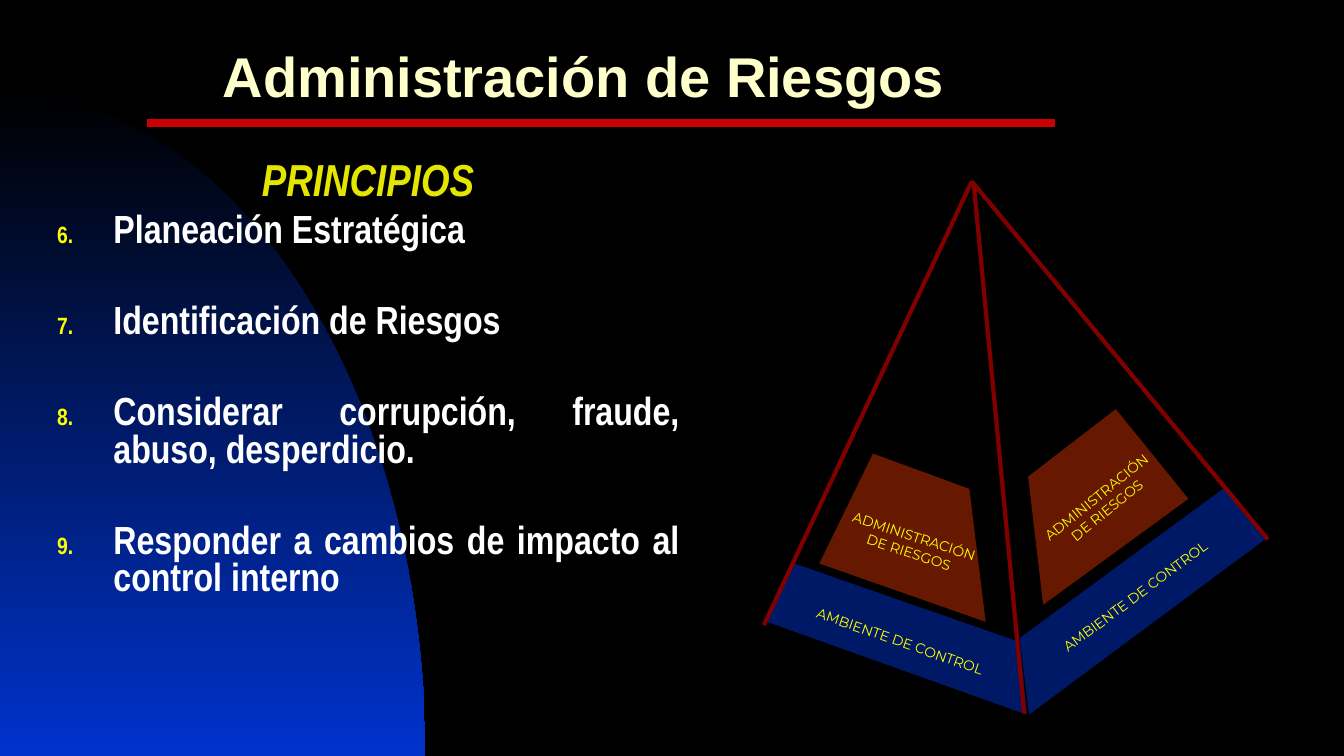
"""Build the slide on risk management with its principles and the control pyramid."""
from math import cos, pi, sin

from lxml.etree import SubElement
from pptx import Presentation
from pptx.dml.color import RGBColor
from pptx.enum.shapes import MSO_CONNECTOR as Connector
from pptx.enum.text import MSO_ANCHOR as Anchor, MSO_AUTO_SIZE as AutoSize, PP_ALIGN as Align
from pptx.oxml.ns import qn
from pptx.util import Cm, Pt


def color(value):
    return RGBColor.from_string(value)


def write(para, text, font, size, fill, bold=False, italic=False,
          align=Align.CENTER, leading=1.0, before=0):
    para.alignment = align
    para.line_spacing = leading
    para.space_before = Pt(before)
    span = para.add_run()
    span.text = text
    span.font.name = font
    span.font.size = Pt(size)
    span.font.bold = bold
    span.font.italic = italic
    span.font.color.rgb = color(fill)


deck = Presentation()
deck.slide_width, deck.slide_height = Cm(33.87), Cm(19.05)
page = deck.slides.add_slide(deck.slide_layouts[5])
page.background.fill.solid()
page.background.fill.fore_color.rgb = color("000000")

ARC_STEPS = 60
angles = [step * pi / 2 / ARC_STEPS for step in range(ARC_STEPS + 1)]
glow_points = [(0, 19.05)] + [(10.72 * sin(a), 19.05 - 16.71 * cos(a)) for a in angles]
right_base = [(25.7, 16.08), (25.93, 18.01), (31.95, 13.54), (30.89, 12.27)]
left_base = [(19.33, 15.67), (20.02, 14.2), (25.7, 16.18), (25.88, 18.01)]
left_risk = [(20.65, 14.2), (22, 11.43), (24.43, 12.32), (24.84, 15.67)]
right_risk = [(26.29, 15.24), (25.91, 12.01), (28.12, 10.31), (29.95, 12.57)]

for points, fill in [
    (glow_points, None),
    (right_base, "0033CC"),
    (left_base, "0033CC"),
    (left_risk, "CC3300"),
    (right_risk, "CC3300"),
]:
    corners = [(Cm(x), Cm(y)) for x, y in points]
    builder = page.shapes.build_freeform(*corners[0], scale=1.0)
    builder.add_line_segments(corners[1:], close=True)
    panel = builder.convert_to_shape()
    panel.shadow.inherit = False
    panel.line.fill.background()
    if fill:
        panel.fill.solid()
        panel.fill.fore_color.rgb = color(fill)
        tint = panel._element.spPr.find(".//" + qn("a:srgbClr"))
        SubElement(tint, qn("a:alpha"), val="50000")
    else:
        panel.fill.gradient()
        panel.fill.gradient_angle = 270
        for stop, shade, position in zip(panel.fill.gradient_stops, ("000000", "0033CC"), (0, 1)):
            stop.color.rgb = color(shade)
            stop.position = position

for label, left, top, width, height, angle in [
    ("AMBIENTE DE CONTROL", 19.3, 15.82, 6.76, 0.69, 19.3),
    ("AMBIENTE DE CONTROL", 25.27, 14.68, 6.68, 0.69, 323.3),
    ("ADMINISTRACIÓN DE RIESGOS", 20.9, 13.16, 4.14, 1.12, 18.2),
    ("ADMINISTRACIÓN DE RIESGOS", 25.68, 12.14, 4.17, 1.12, 321.1),
]:
    box = page.shapes.add_textbox(Cm(left), Cm(top), Cm(width), Cm(height))
    box.rotation = angle
    box.text_frame.word_wrap = True
    write(box.text_frame.paragraphs[0], label, "Montserrat", 10, "FFFF00")

for x1, y1, x2, y2, stroke, weight in [
    (24.49, 4.57, 31.95, 13.59, "800000", 3),
    (24.49, 4.57, 19.25, 15.75, "800000", 3),
    (24.54, 4.65, 25.81, 17.98, "800000", 3),
    (3.71, 3.1, 26.59, 3.1, "CC0000", 6),
]:
    edge = page.shapes.add_connector(Connector.STRAIGHT, Cm(x1), Cm(y1), Cm(x2), Cm(y2))
    edge.line.color.rgb = color(stroke)
    edge.line.width = Pt(weight)
    SubElement(edge._element.spPr, qn("a:effectLst"))

title = page.shapes.title
title.left, title.top, title.width, title.height = Cm(5.36), Cm(1.37), Cm(20.32), Cm(1.47)
title.text_frame.auto_size = AutoSize.NONE
title.text_frame.vertical_anchor = Anchor.MIDDLE
write(title.text_frame.paragraphs[0], "Administración de Riesgos", "Arial", 40, "FFFFCC",
      bold=True, align=Align.LEFT, leading=0.7)

body = page.shapes.add_textbox(Cm(1.19), Cm(3.96), Cm(16.18), Cm(13.64)).text_frame
body.word_wrap = True
write(body.paragraphs[0], "PRINCIPIOS", "Arial Narrow", 32, "E5E600",
      bold=True, italic=True, leading=0.8, before=6.4)

principles = [
    "Planeación Estratégica",
    "Identificación de Riesgos",
    "Considerar corrupción, fraude, abuso, desperdicio.",
    "Responder a cambios de impacto al control interno",
]
for index, principle in enumerate(principles):
    para = body.add_paragraph()
    write(para, principle, "Arial Narrow", 28, "FFFFFF", bold=True,
          align=Align.JUSTIFY, leading=0.8, before=38.2 if index else 5.7)
    layout = para._p.get_or_add_pPr()
    layout.set("marL", str(Cm(1.42)))
    layout.set("indent", str(-Cm(1.42)))
    SubElement(SubElement(layout, qn("a:buClr")), qn("a:srgbClr"), val="FFFF00")
    SubElement(layout, qn("a:buSzPct"), val="60000")
    SubElement(layout, qn("a:buAutoNum"), type="arabicPeriod", startAt="6")

deck.save("out.pptx")
